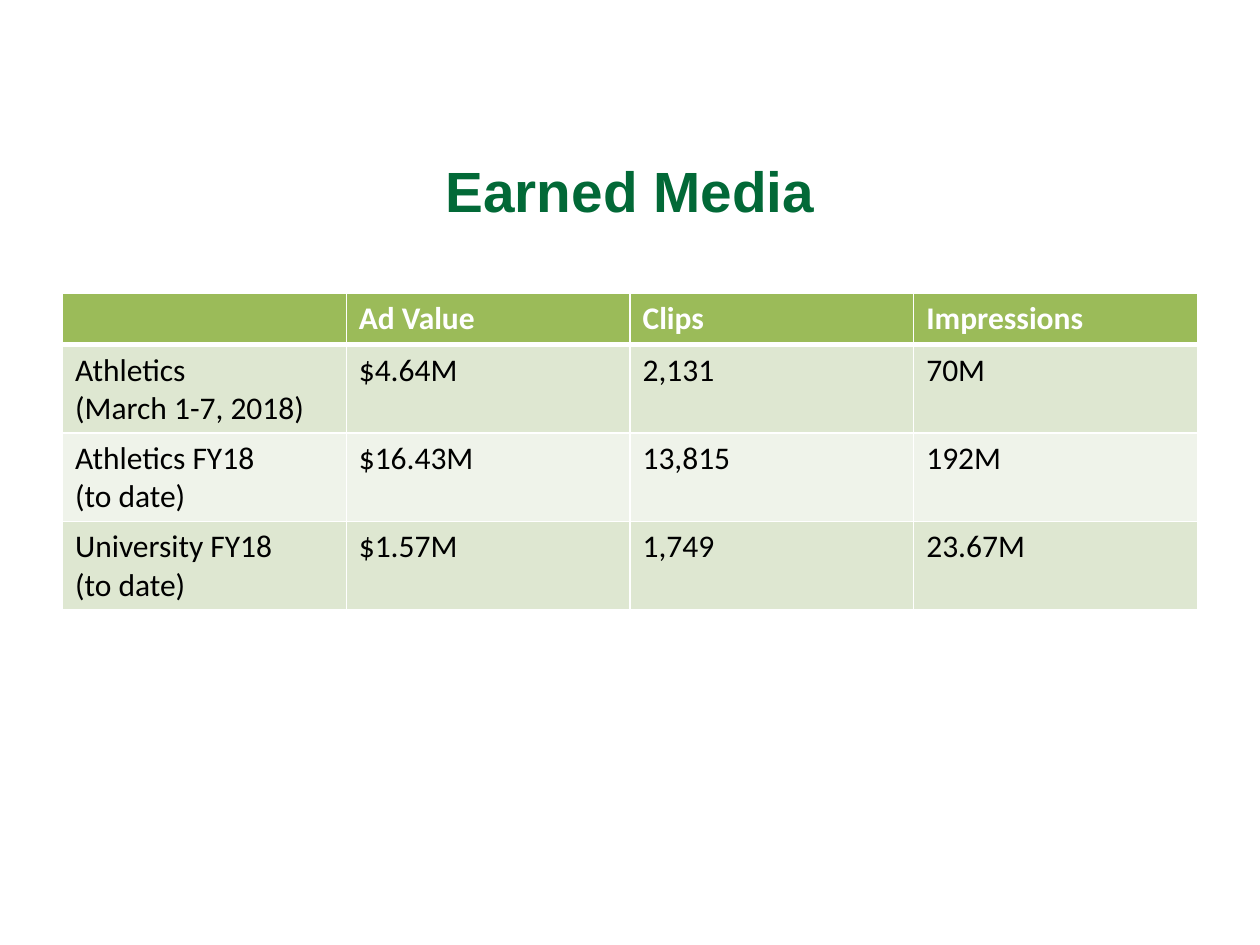
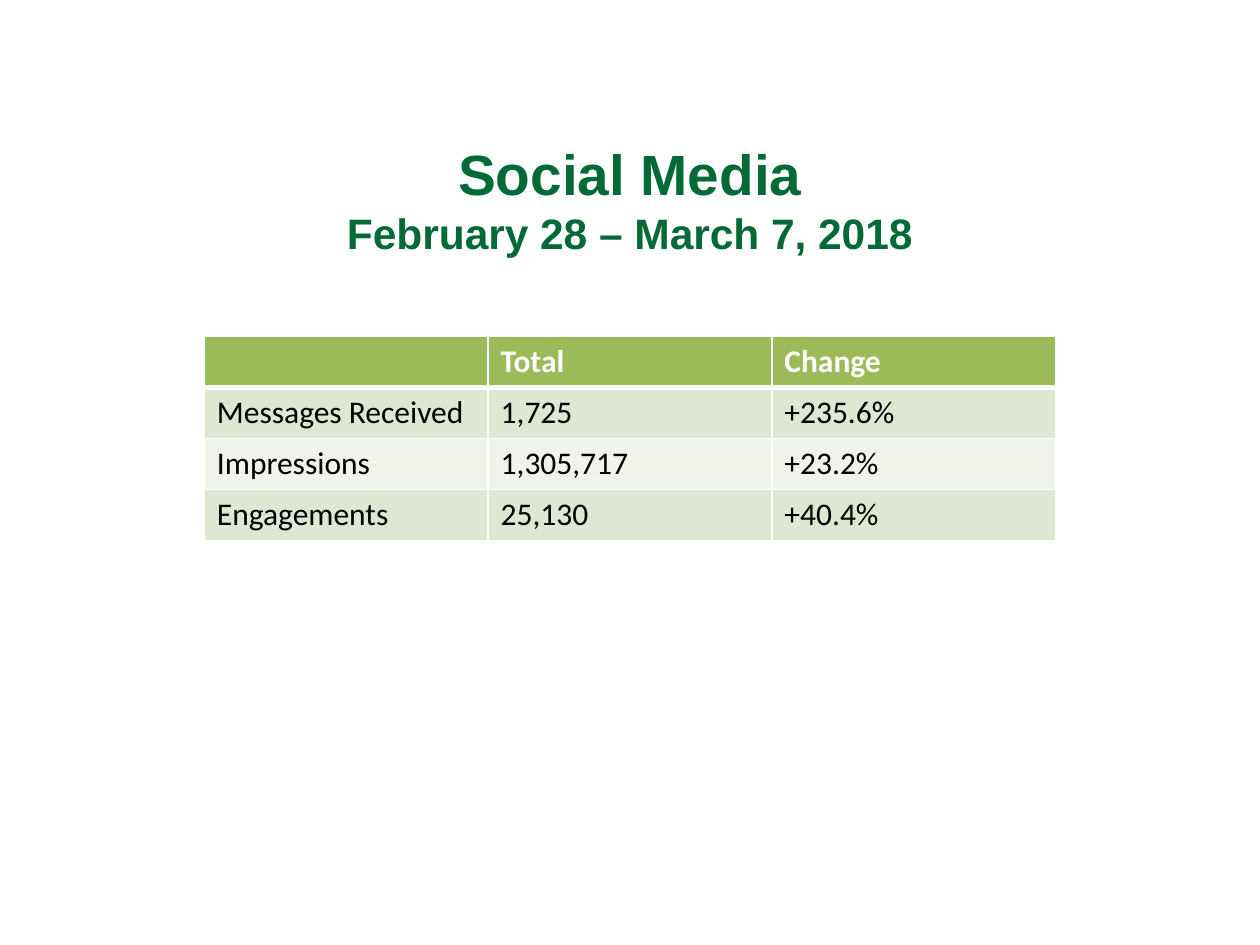
from lxml.etree import SubElement
from pptx import Presentation
from pptx.dml.color import RGBColor
from pptx.enum.text import MSO_ANCHOR, PP_ALIGN
from pptx.oxml.ns import qn
from pptx.util import Cm, Pt

PAGES = [
    {
        "title": [("Earned Media", 32.4)],
        "title_inset": 0.13,
        "table_top": 5.92,
        "body_height": 1.78,
        "rows": [
            ("", "Ad Value", "Clips", "Impressions"),
            ("Athletics\n(March 1-7, 2018)", "$4.64M", "2,131", "70M"),
            ("Athletics FY18\n(to date)", "$16.43M", "13,815", "192M"),
            ("University FY18\n(to date)", "$1.57M", "1,749", "23.67M"),
        ],
    },
    {
        "title": [("Social Media", 32.4), ("February 28 – March 7, 2018", 24.3)],
        "title_inset": 0.46,
        "table_top": 6.78,
        "body_height": 1.03,
        "rows": [
            ("", "Total", "Change"),
            ("Messages Received", "1,725", "+235.6%"),
            ("Impressions", "1,305,717", "+23.2%"),
            ("Engagements", "25,130", "+40.4%"),
        ],
    },
]

PAGE_WIDTH, PAGE_HEIGHT = 25.4, 19.05
TITLE_LEFT, TITLE_TOP, TITLE_HEIGHT = 1.27, 2.24, 3.18
COLUMN_WIDTH, HEADER_HEIGHT = 5.72, 1.03
TITLE_GREEN, HEADER_GREEN = "026937", "9BBB59"
BAND_GREENS = ("EFF3EA", "DEE7D1")
WHITE, BLACK = "FFFFFF", "000000"
THIN, THICK = 1, 3


def color(value):
    return RGBColor.from_string(value)


def style(paragraph, name, size, value, bold):
    font = paragraph.font
    font.name, font.size, font.bold = name, Pt(size), bold
    font.color.rgb = color(value)


def add_title(page, lines, inset):
    box = page.shapes.add_textbox(Cm(TITLE_LEFT), Cm(TITLE_TOP),
                                  Cm(PAGE_WIDTH - 2 * TITLE_LEFT), Cm(TITLE_HEIGHT))
    frame = box.text_frame
    frame.word_wrap = True
    frame.vertical_anchor = MSO_ANCHOR.MIDDLE
    frame.margin_top = Cm(inset)
    frame.text = "\n".join(text for text, size in lines)
    for paragraph, (text, size) in zip(frame.paragraphs, lines):
        paragraph.alignment = PP_ALIGN.CENTER
        style(paragraph, "Arial", size, TITLE_GREEN, True)


def add_borders(cell, row):
    widths = {
        "a:lnL": THIN,
        "a:lnR": THIN,
        "a:lnT": THICK if row == 1 else THIN,
        "a:lnB": THICK if row == 0 else THIN,
    }
    properties = cell._tc.get_or_add_tcPr()
    for tag, width in widths.items():
        line = SubElement(properties, qn(tag), w=str(Pt(width)))
        fill = SubElement(line, qn("a:solidFill"))
        SubElement(fill, qn("a:srgbClr"), val=WHITE)


def fill_cell(cell, text, row):
    is_header = row == 0
    add_borders(cell, row)
    cell.fill.solid()
    cell.fill.fore_color.rgb = color(HEADER_GREEN if is_header else BAND_GREENS[row % 2])
    cell.text = text
    for paragraph in cell.text_frame.paragraphs:
        style(paragraph, "Calibri", 18, WHITE if is_header else BLACK, is_header)


def add_data_table(page, rows, top, body_height):
    columns = len(rows[0])
    width = columns * COLUMN_WIDTH
    height = HEADER_HEIGHT + (len(rows) - 1) * body_height
    table = page.shapes.add_table(len(rows), columns, Cm((PAGE_WIDTH - width) / 2),
                                  Cm(top), Cm(width), Cm(height)).table
    for row, texts in enumerate(rows):
        table.rows[row].height = Cm(body_height if row else HEADER_HEIGHT)
        for column, text in enumerate(texts):
            fill_cell(table.cell(row, column), text, row)


def main():
    deck = Presentation()
    deck.slide_width, deck.slide_height = Cm(PAGE_WIDTH), Cm(PAGE_HEIGHT)
    for content in PAGES:
        page = deck.slides.add_slide(deck.slide_layouts[6])
        add_title(page, content["title"], content["title_inset"])
        add_data_table(page, content["rows"], content["table_top"], content["body_height"])
    deck.save("out.pptx")


if __name__ == "__main__":
    main()
